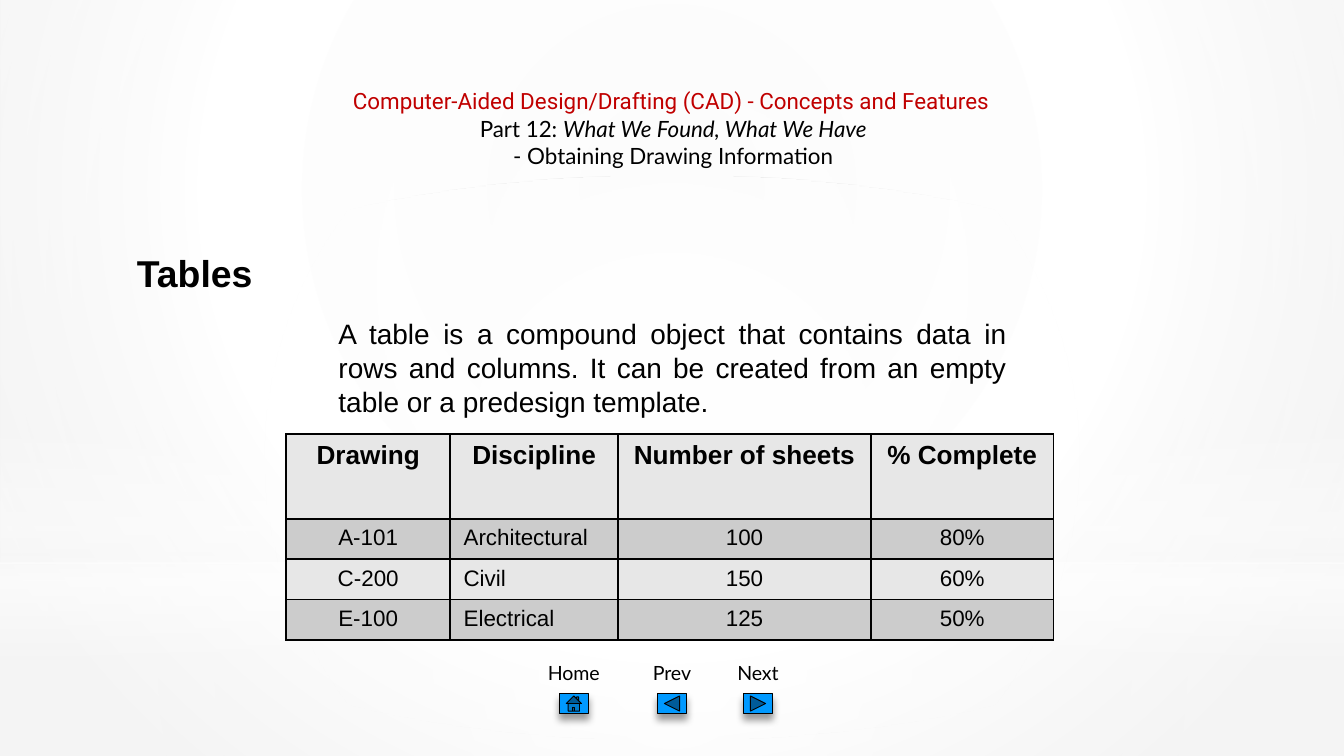
from lxml import etree
from pptx import Presentation
from pptx.dml.color import RGBColor
from pptx.enum.shapes import MSO_SHAPE as SHAPE
from pptx.enum.text import PP_ALIGN as ALIGN
from pptx.oxml import parse_xml
from pptx.oxml.ns import nsdecls, qn
from pptx.util import Inches, Pt

BLACK = RGBColor(0x00, 0x00, 0x00)
RED = RGBColor(0xC0, 0x00, 0x00)
BLUE = RGBColor(0x00, 0x99, 0xFF)
WHITE = RGBColor(0xFF, 0xFF, 0xFF)
PALE = RGBColor(0xE7, 0xE7, 0xE7)
GREY = RGBColor(0xCC, 0xCC, 0xCC)
SMOKE = RGBColor(0xF4, 0xF4, 0xF4)

BACKGROUND = [(0, SMOKE, 100), (60, WHITE, 100), (100, GREY, 100)]
CENTER = (50, 50, 50, 50)
GLOWS = [
    (SHAPE.RECTANGLE, 4.19, 1.44, [(0, 91), (37, 76), (100, 79)], CENTER),
    (SHAPE.RECTANGLE, 0, 4.19, [(0, 89), (48, 62), (100, 79)], CENTER),
    (SHAPE.RECTANGLE, 3.09, 1.88,
     [(0, 0), (29, 30), (45, 40), (55, 26), (65, 60), (100, 0)], None),
    (SHAPE.OVAL, 1.31, 4.19, [(0, 100), (56, 0)], CENTER),
]
COURSE = "Computer-Aided Design/Drafting (CAD) - Concepts and Features"
PART = [
    [("Part 12: ", False), ("What We Found, What We Have", True)],
    [("- Obtaining Drawing Information", False)],
]
HEADING = "Tables"
BODY = ("A table is a compound object that contains data in rows and columns. "
        "It can be created from an empty table or a predesign template.")
BUTTONS = [
    ("Home", SHAPE.ACTION_BUTTON_HOME, 4.27),
    ("Prev", SHAPE.ACTION_BUTTON_BACK_OR_PREVIOUS, 5.0),
    ("Next", SHAPE.ACTION_BUTTON_FORWARD_OR_NEXT, 5.64),
]
ROWS = [
    ("Drawing", "Discipline", "Number of sheets", "% Complete"),
    ("A-101", "Architectural", "100", "80%"),
    ("C-200", "Civil", "150", "60%"),
    ("E-100", "Electrical", "125", "50%"),
]
COL_WIDTHS = [1.22, 1.25, 1.88, 1.36]
ROW_HEIGHTS = [0.63, 0.3, 0.3, 0.3]


def set_gradient(holder, stops, focus):
    grad = parse_xml(f'<a:gradFill {nsdecls("a")} rotWithShape="1"/>')
    gs_list = etree.SubElement(grad, qn("a:gsLst"))
    for pos, color, opacity in stops:
        gs = etree.SubElement(gs_list, qn("a:gs"), pos=str(pos * 1000))
        clr = etree.SubElement(gs, qn("a:srgbClr"), val=str(color))
        etree.SubElement(clr, qn("a:alpha"), val=str(opacity * 1000))
    if focus:
        path = etree.SubElement(grad, qn("a:path"))
        path.set("path", "circle")
        rect = {side: str(v * 1000) for side, v in zip("ltrb", focus)}
        etree.SubElement(path, qn("a:fillToRect"), **rect)
    else:
        etree.SubElement(grad, qn("a:lin"), ang="5400000", scaled="0")
    holder.replace(holder.find(qn("a:solidFill")), grad)


def add_text(s, box, paragraphs, size, font, color=BLACK, align=ALIGN.CENTER,
             bold=False):
    tf = s.shapes.add_textbox(*map(Inches, box)).text_frame
    tf.word_wrap = True
    for i, runs in enumerate(paragraphs):
        p = tf.add_paragraph() if i else tf.paragraphs[0]
        p.alignment = align
        for text, italic in runs:
            r = p.add_run()
            r.text = text
            r.font.italic = italic
        set_font(p, size, font, color, bold)


def set_font(p, size, font, color, bold):
    p.font.size = Pt(size)
    p.font.name = font
    p.font.color.rgb = color
    p.font.bold = bold


def add_button(s, label, kind, center):
    width = 0.22
    sp = s.shapes.add_shape(kind, Inches(center - width / 2), Inches(5.16),
                            Inches(width), Inches(0.15))
    sp.fill.solid()
    sp.fill.fore_color.rgb = BLUE
    sp.line.color.rgb = BLACK
    sp.line.width = Pt(0.5)
    sp.shadow.inherit = False
    effects = sp._element.spPr.find(qn("a:effectLst"))
    effects.append(parse_xml(
        f'<a:outerShdw {nsdecls("a")} blurRad="{Pt(4)}" dist="{Pt(3)}" '
        'dir="5400000" rotWithShape="0"><a:srgbClr val="000000">'
        '<a:alpha val="40000"/></a:srgbClr></a:outerShdw>'))
    add_text(s, (center - 0.52, 4.87, 1.04, 0.28), [[(label, False)]], 10.5, "Lato")


def add_border(cell):
    tc_pr = cell._tc.get_or_add_tcPr()
    for i, side in enumerate(("lnL", "lnR", "lnT", "lnB")):
        tc_pr.insert(i, parse_xml(
            f'<a:{side} {nsdecls("a")} w="{Pt(1)}"><a:solidFill>'
            f'<a:srgbClr val="{BLACK}"/></a:solidFill></a:{side}>'))


def add_sheet_table(s):
    table = s.shapes.add_table(
        len(ROWS), len(COL_WIDTHS), Inches(2.13), Inches(3.23),
        Inches(sum(COL_WIDTHS)), Inches(sum(ROW_HEIGHTS))).table
    for column, width in zip(table.columns, COL_WIDTHS):
        column.width = Inches(width)
    for i, (texts, height) in enumerate(zip(ROWS, ROW_HEIGHTS)):
        table.rows[i].height = Inches(height)
        header = i == 0
        for j, text in enumerate(texts):
            cell = table.cell(i, j)
            cell.text = text
            cell.fill.solid()
            cell.fill.fore_color.rgb = GREY if i % 2 else PALE
            add_border(cell)
            p = cell.text_frame.paragraphs[0]
            p.alignment = ALIGN.LEFT if j == 1 and not header else ALIGN.CENTER
            set_font(p, 14 if header else 12, "Arial", BLACK, header)


prs = Presentation()
prs.slide_width = Inches(10)
prs.slide_height = prs.slide_width * 9 // 16
s = prs.slides.add_slide(prs.slide_layouts[6])

s.background.fill.solid()
s.background.fill.fore_color.rgb = WHITE
set_gradient(s._element.find(".//" + qn("p:bgPr")), BACKGROUND, (20, 10, 20, 60))
for kind, top, height, stops, focus in GLOWS:
    sp = s.shapes.add_shape(kind, 0, Inches(top), prs.slide_width, Inches(height))
    sp.shadow.inherit = False
    sp.line.fill.background()
    sp.fill.solid()
    set_gradient(sp._element.spPr, [(pos, WHITE, a) for pos, a in stops], focus)

add_text(s, (2.4, 0.6, 5.19, 0.3), [[(COURSE, False)]], 12, "Roboto", RED)
add_text(s, (1.9, 0.81, 6.22, 0.5), PART, 12, "Lato")
for button in BUTTONS:
    add_button(s, *button)
add_text(s, (0.92, 1.81, 2.08, 0.44), [[(HEADING, False)]], 20, "Arial",
         align=ALIGN.LEFT, bold=True)
add_text(s, (2.42, 2.31, 5.17, 0.86), [[(BODY, False)]], 15, "Arial",
         align=ALIGN.JUSTIFY)
add_sheet_table(s)

prs.save("out.pptx")
